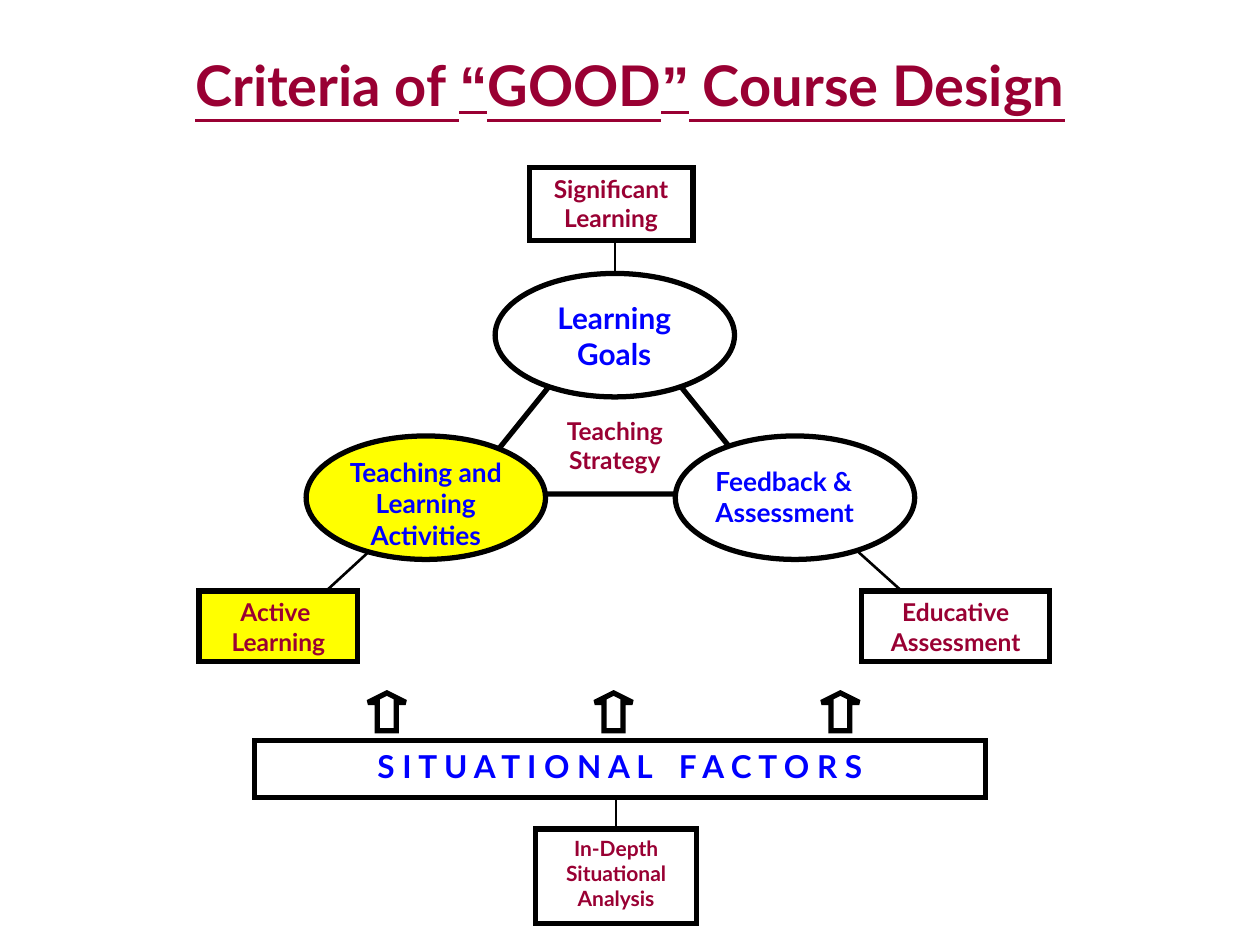
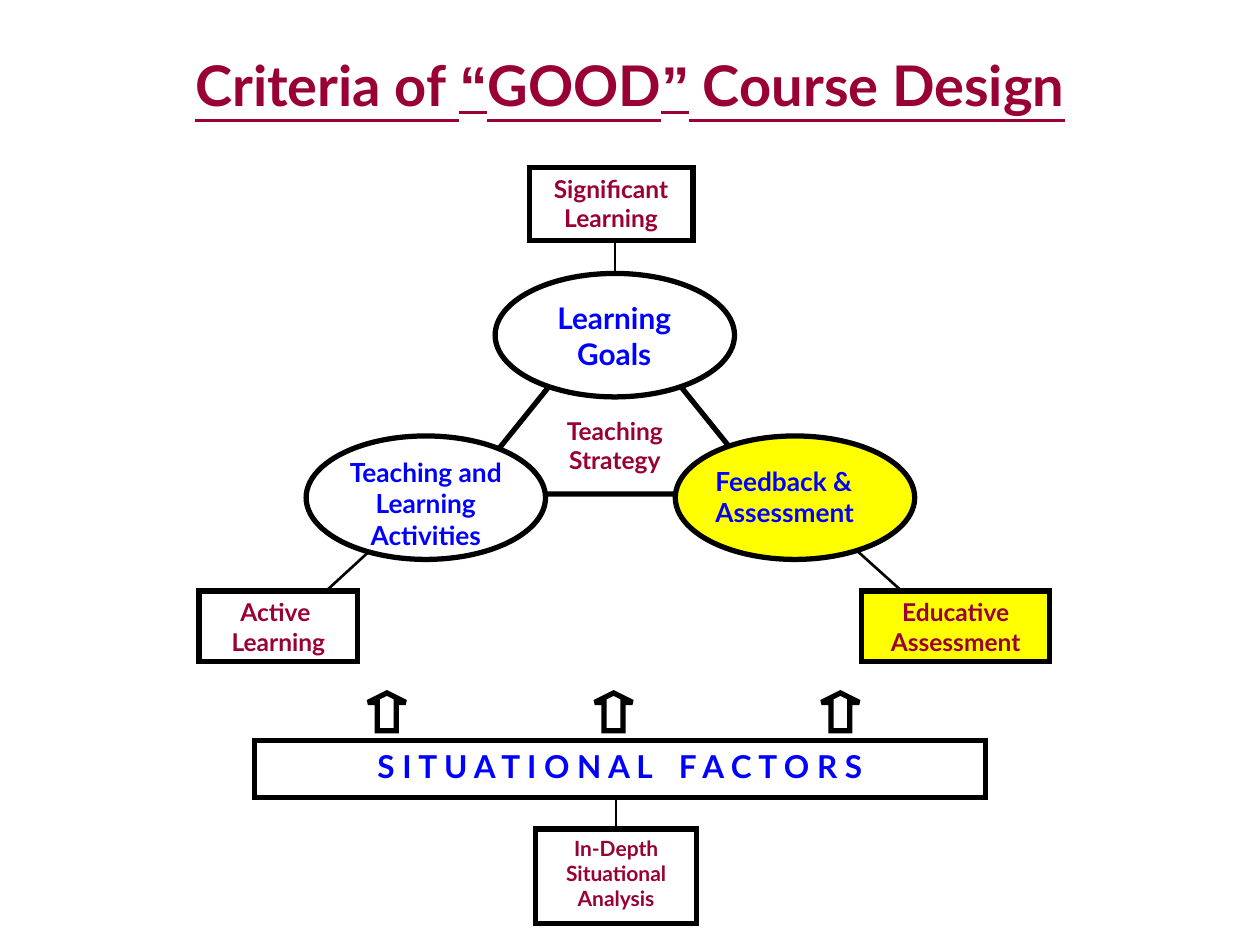
from dataclasses import dataclass

from lxml.etree import SubElement
from pptx import Presentation
from pptx.dml.color import RGBColor
from pptx.enum.shapes import MSO_CONNECTOR, MSO_SHAPE
from pptx.enum.text import MSO_ANCHOR, MSO_AUTO_SIZE, PP_ALIGN
from pptx.oxml.ns import qn
from pptx.util import Inches, Pt

COLORS = {
    "outline": "000000",
    "paper": "FFFFFF",
    "highlight": "FFFF00",
    "criterion": "990033",
    "component": "0000FF",
}
FONT = "Lato"
QUOTE_FONT = "Arial"
TITLE_PARTS = ["Criteria of ", "“", "GOOD", "”", " Course Design"]
OUTLINE_POINTS = 3
OVAL_SIZE = (1.9, 0.98)


@dataclass(frozen=True)
class Label:
    lines: tuple[str, ...]
    size: int
    color: str = "criterion"
    align: PP_ALIGN = PP_ALIGN.CENTER


@dataclass(frozen=True)
class Box:
    area: tuple[float, float, float, float]
    label: Label


@dataclass(frozen=True)
class Oval:
    corner: tuple[float, float]
    label_area: tuple[float, float, float, float]
    label: Label


@dataclass(frozen=True)
class Link:
    start: tuple[float, float]
    end: tuple[float, float]
    width: float = 1.5


# Criteria boxes
BOXES = {
    "significant": Box((4.2, 1.33, 1.3, 0.58), Label(("Significant", "Learning"), 14)),
    "educative": Box((6.84, 4.69, 1.49, 0.56), Label(("Educative", "Assessment"), 14)),
    "active": Box((1.58, 4.69, 1.26, 0.56), Label(("Active ", "Learning"), 14)),
    "analysis": Box((4.25, 6.58, 1.28, 0.75), Label(("In-Depth Situational Analysis",), 12)),
}

# Design components
OVALS = {
    "goals": Oval((3.93, 2.17), (4.2, 2.33, 1.35, 0.54),
                  Label(("Learning Goals",), 17, "component")),
    "feedback": Oval((5.36, 3.46), (5.58, 3.64, 1.5, 0.53),
                     Label(("Feedback &", "Assessment"), 15, "component", PP_ALIGN.LEFT)),
    "activities": Oval((2.43, 3.46), (2.53, 3.57, 1.7, 0.68),
                       Label(("Teaching and", "Learning", "Activities"), 15, "component")),
}

STRATEGY = Box((4.17, 3.25, 1.42, 0.57), Label(("Teaching Strategy",), 14))
FACTORS_AREA = (2.02, 5.88, 5.8, 0.45)
FACTORS_LABEL = Label(("S I T U A T I O N A L",), 18, "component")
FACTORS_SECOND_WORD = "F A C T O R S"
WORD_GAP = 1040  # extra width of the space between the words, in 1/100 pt

SIDE_LINKS = [Link((6.8, 4.37), (7.3, 4.82)), Link((2.97, 4.34), (2.48, 4.79))]
GOALS_LINK = Link((4.88, 1.91), (4.88, 2.17))
ANALYSIS_LINK = Link((4.89, 6.33), (4.89, 6.58), 0.75)

HIGHLIGHTS = [{"activities", "active"}, {"feedback", "educative"}]


def color(name: str) -> RGBColor:
    return RGBColor.from_string(COLORS[name])


def write_label(shape, label: Label) -> None:
    frame = shape.text_frame
    frame.word_wrap = True
    frame.vertical_anchor = MSO_ANCHOR.TOP
    frame.text = "\n".join(label.lines)
    for para in frame.paragraphs:
        para.alignment = label.align
        para.font.name = FONT
        para.font.size = Pt(label.size)
        para.font.bold = True
        para.font.color.rgb = color(label.color)


def add_outlined(shapes, kind: MSO_SHAPE, area: tuple, fill: str | None = "paper"):
    shape = shapes.add_shape(kind, *map(Inches, area))
    shape.shadow.inherit = False
    if fill:
        shape.fill.solid()
        shape.fill.fore_color.rgb = color(fill)
    else:
        shape.fill.background()
    shape.line.color.rgb = color("outline")
    shape.line.width = Pt(OUTLINE_POINTS)
    # Sharp corners
    outline = shape._element.spPr.find(qn("a:ln"))
    SubElement(outline, qn("a:miter")).set("lim", "800000")
    return shape


def add_text(shapes, area: tuple, label: Label) -> None:
    write_label(shapes.add_textbox(*map(Inches, area)), label)


def add_link(shapes, link: Link):
    connector = shapes.add_connector(
        MSO_CONNECTOR.STRAIGHT, *map(Inches, link.start + link.end))
    connector.line.color.rgb = color("outline")
    connector.line.width = Pt(link.width)
    SubElement(connector._element.spPr, qn("a:effectLst"))
    return connector


def add_title(page) -> None:
    title = page.shapes.title
    title.left, title.top, title.width, title.height = map(Inches, (1.06, 0.33, 7.88, 0.67))
    write_label(title, Label(("",), 32))
    frame = title.text_frame
    frame.auto_size = MSO_AUTO_SIZE.NONE
    frame.vertical_anchor = MSO_ANCHOR.MIDDLE
    para = frame.paragraphs[0]
    para.font.underline = True
    for part in TITLE_PARTS:
        span = para.add_run()
        span.text = part
        if part in "“”":
            span.font.name = QUOTE_FONT


def add_factors(shapes) -> None:
    bar = add_outlined(shapes, MSO_SHAPE.RECTANGLE, FACTORS_AREA)
    write_label(bar, FACTORS_LABEL)
    para = bar.text_frame.paragraphs[0]
    gap = para.add_run()
    gap.text = " "
    gap.font._element.set("spc", str(WORD_GAP))
    para.add_run().text = FACTORS_SECOND_WORD
    # Evenly spaced arrows above the bar
    for column in range(3):
        arrow = add_outlined(shapes, MSO_SHAPE.UP_ARROW, (2.92 + 1.8 * column, 5.5, 0.3, 0.3))
        arrow.adjustments[0] = 0.5
        arrow.adjustments[1] = 0.25


def add_oval(shapes, oval: Oval, fill: str):
    group = shapes.add_group_shape()
    ellipse = add_outlined(group.shapes, MSO_SHAPE.OVAL, oval.corner + OVAL_SIZE, fill)
    add_text(group.shapes, oval.label_area, oval.label)
    return ellipse


def add_page(deck, highlighted: set[str]) -> None:
    page = deck.slides.add_slide(deck.slide_layouts[5])
    shapes = page.shapes
    add_title(page)

    # Triangle and lines that run behind the ovals and boxes
    add_outlined(shapes, MSO_SHAPE.ISOSCELES_TRIANGLE, (3.67, 2.42, 2.42, 1.5), None)
    for link in SIDE_LINKS:
        add_link(shapes, link)
    add_factors(shapes)

    # Components and criteria
    def fill_for(name: str) -> str:
        return "highlight" if name in highlighted else "paper"

    ellipses = {name: add_oval(shapes, oval, fill_for(name)) for name, oval in OVALS.items()}
    frames = {}
    for name, box in BOXES.items():
        frames[name] = add_outlined(shapes, MSO_SHAPE.RECTANGLE, box.area, fill_for(name))
        write_label(frames[name], box.label)
    add_text(shapes, STRATEGY.area, STRATEGY.label)

    # Vertical lines joined to the top of the shape below
    add_link(shapes, GOALS_LINK).end_connect(ellipses["goals"], 0)
    add_link(shapes, ANALYSIS_LINK).end_connect(frames["analysis"], 0)


def main() -> None:
    deck = Presentation()
    deck.slide_width, deck.slide_height = Inches(10), Inches(7.5)
    for highlighted in HIGHLIGHTS:
        add_page(deck, highlighted)
    deck.save("out.pptx")


if __name__ == "__main__":
    main()
